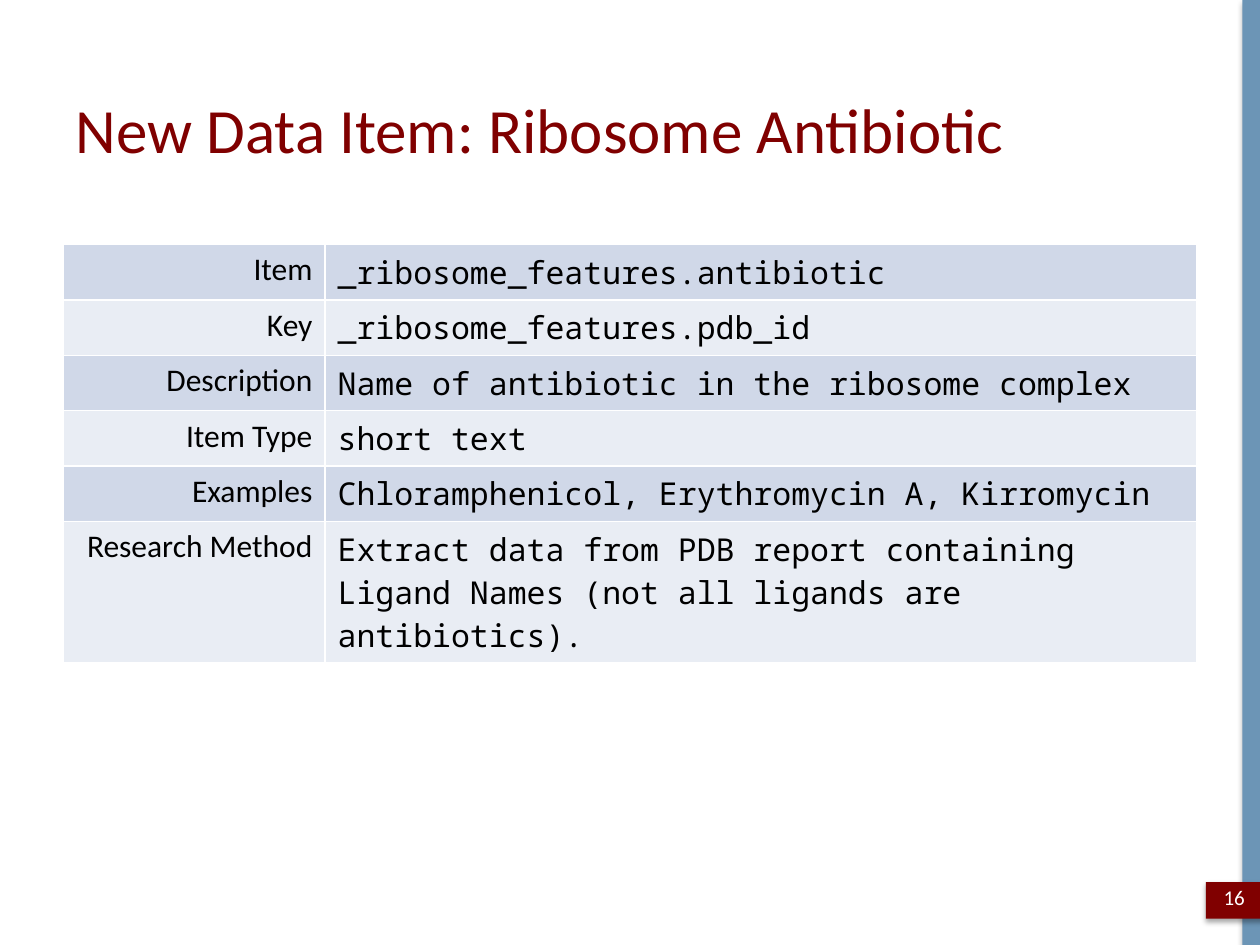
import pptx
import pptx.dml.color
import pptx.enum.shapes
import pptx.enum.text
import pptx.oxml
import pptx.oxml.ns
import pptx.util

Inches = pptx.util.Inches
Pt = pptx.util.Pt
RGBColor = pptx.dml.color.RGBColor
Align = pptx.enum.text.PP_ALIGN
Anchor = pptx.enum.text.MSO_ANCHOR

MAROON = RGBColor(0x80, 0x00, 0x00)
STEEL_BLUE = RGBColor(0x6C, 0x95, 0xB6)
BLACK = RGBColor(0x00, 0x00, 0x00)
WHITE = RGBColor(0xFF, 0xFF, 0xFF)
BAND_COLORS = [RGBColor(0xD0, 0xD8, 0xE8), RGBColor(0xE9, 0xED, 0xF4)]

SANS = "Calibri"
MONO = "Noto Sans Mono"

ITEM_ROWS = [
    ("Item", "_ribosome_features.antibiotic"),
    ("Key", "_ribosome_features.pdb_id"),
    ("Description", "Name of antibiotic in the ribosome complex"),
    ("Item Type", "short text"),
    ("Examples", "Chloramphenicol, Erythromycin A, Kirromycin"),
    ("Research Method", "Extract data from PDB report containing Ligand Names "
                        "(not all ligands are antibiotics)."),
]
COLUMN_WIDTHS = [2.08, 6.92]
ROW_HEIGHTS = [0.44] * 5 + [1.12]

NAMESPACE = pptx.oxml.ns.nsdecls("a")
SHADOW_XML = (
    f'<a:outerShdw {NAMESPACE} blurRad="{Pt(3.1)}" dist="{Pt(1.8)}" '
    'dir="5400000" rotWithShape="0"><a:srgbClr val="000000">'
    '<a:alpha val="35000"/></a:srgbClr></a:outerShdw>'
)


def write_text(frame, text, font_name, size, color, align=Align.LEFT):
    para = frame.paragraphs[0]
    para.text = text
    para.alignment = align
    para.font.name = font_name
    para.font.size = Pt(size)
    para.font.color.rgb = color


def add_shadowed_bar(page, left, top, width, height, color):
    bar = page.shapes.add_shape(
        pptx.enum.shapes.MSO_SHAPE.RECTANGLE,
        Inches(left), Inches(top), Inches(width), Inches(height))
    bar.fill.solid()
    bar.fill.fore_color.rgb = color
    bar.line.fill.background()
    bar.shadow.inherit = False
    effects = bar._element.spPr.find(pptx.oxml.ns.qn("a:effectLst"))
    effects.append(pptx.oxml.parse_xml(SHADOW_XML))


def add_label(page, left, top, width, height, text, size, color, align):
    box = page.shapes.add_textbox(
        Inches(left), Inches(top), Inches(width), Inches(height))
    box.text_frame.word_wrap = True
    box.text_frame.vertical_anchor = Anchor.MIDDLE
    write_text(box.text_frame, text, SANS, size, color, align)


def add_cell_borders(cell):
    properties = cell._tc.get_or_add_tcPr()
    for side in ("lnL", "lnR", "lnT", "lnB"):
        properties.append(pptx.oxml.parse_xml(
            f'<a:{side} {NAMESPACE} w="{Pt(1)}"><a:solidFill>'
            f'<a:srgbClr val="{WHITE}"/></a:solidFill></a:{side}>'))


def add_item_table(page, left, top):
    table = page.shapes.add_table(
        len(ITEM_ROWS), len(COLUMN_WIDTHS), Inches(left), Inches(top),
        Inches(sum(COLUMN_WIDTHS)), Inches(sum(ROW_HEIGHTS))).table
    table.first_row = False
    table.horz_banding = False
    for column, width in zip(table.columns, COLUMN_WIDTHS):
        column.width = Inches(width)
    for row, height in zip(table.rows, ROW_HEIGHTS):
        row.height = Inches(height)
    column_styles = [(SANS, Align.RIGHT), (MONO, Align.LEFT)]
    for row_index, texts in enumerate(ITEM_ROWS):
        for column_index, text in enumerate(texts):
            cell = table.cell(row_index, column_index)
            font_name, align = column_styles[column_index]
            write_text(cell.text_frame, text, font_name, 18, BLACK, align)
            add_cell_borders(cell)
            cell.fill.solid()
            cell.fill.fore_color.rgb = BAND_COLORS[row_index % 2]


def main():
    deck = pptx.Presentation()
    deck.slide_width = Inches(10)
    deck.slide_height = Inches(7.5)
    page = deck.slides.add_slide(deck.slide_layouts[6])
    add_shadowed_bar(page, 9.86, 0, 0.14, 7.5, STEEL_BLUE)
    add_shadowed_bar(page, 9.57, 7, 0.48, 0.29, MAROON)
    add_label(page, 0.5, 0.3, 9.29, 1.44, "New Data Item: Ribosome Antibiotic",
              36, MAROON, Align.LEFT)
    add_label(page, 9.57, 6.92, 0.45, 0.4, "16", 12, WHITE, Align.CENTER)
    add_item_table(page, 0.5, 1.94)
    deck.save("out.pptx")


if __name__ == "__main__":
    main()
